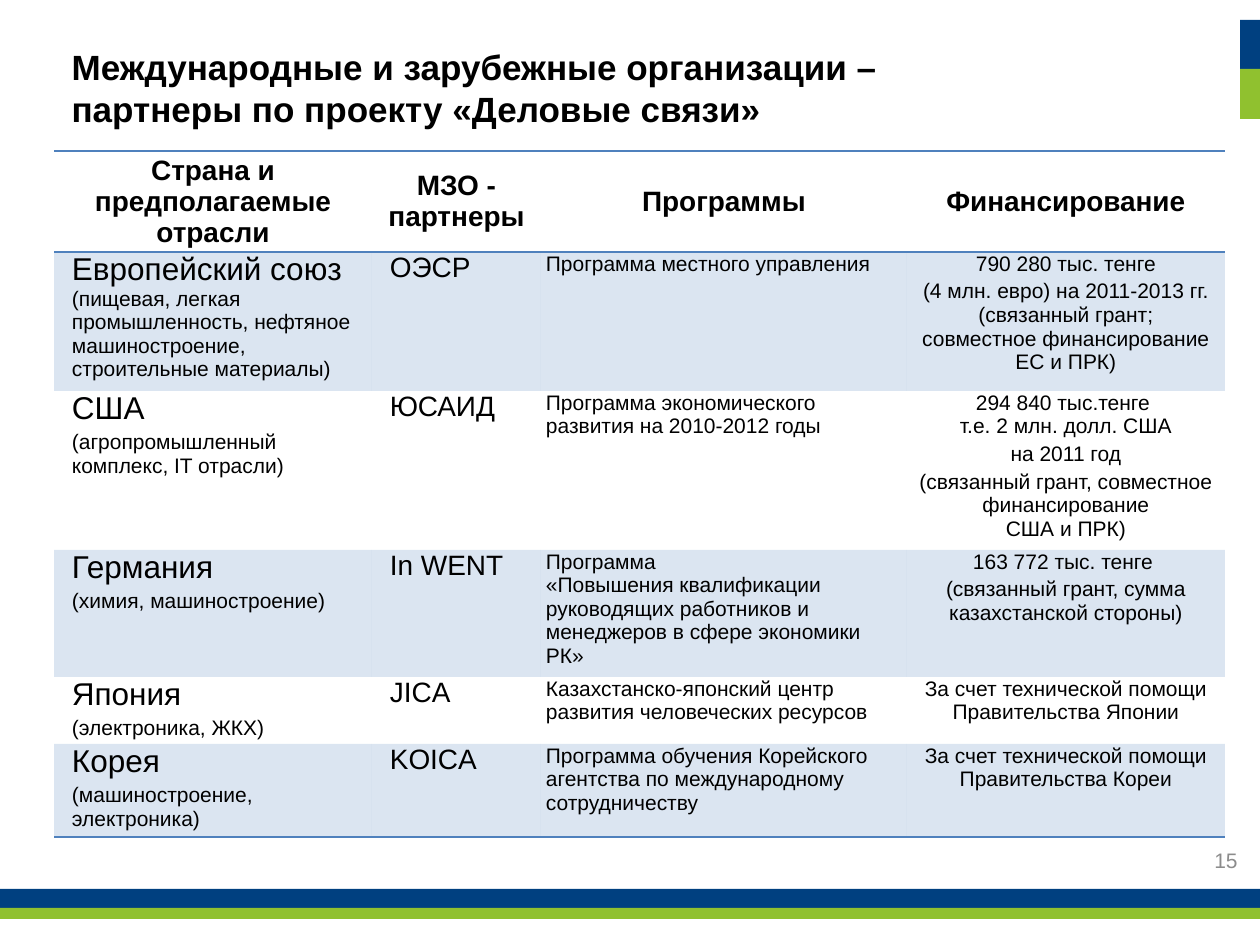
from dataclasses import dataclass

from lxml import etree
from pptx import Presentation
from pptx.dml.color import RGBColor
from pptx.enum.shapes import MSO_SHAPE
from pptx.enum.text import MSO_ANCHOR, PP_ALIGN
from pptx.oxml.ns import qn
from pptx.util import Emu, Pt

RECT = MSO_SHAPE.RECTANGLE
LEFT, CENTER, RIGHT = PP_ALIGN.LEFT, PP_ALIGN.CENTER, PP_ALIGN.RIGHT
TOP, MIDDLE = MSO_ANCHOR.TOP, MSO_ANCHOR.MIDDLE
NO_STYLE_NO_GRID = "{2D5ABB26-0587-4C30-8999-92F81FD0307C}"
TITLE_ONLY = 5


@dataclass(frozen=True)
class Theme:
    font: str = "Arial"
    text: str = "000000"
    muted: str = "8C8C8C"
    navy: str = "004080"
    green: str = "90C12F"
    table: str = "4F81BD"
    band_alpha: int = 20
    title: int = 20
    country: int = 18
    label: int = 16
    body: int = 12


THEME = Theme()

TITLE = "Международные и зарубежные организации – партнеры по проекту «Деловые связи»"
PAGE_NUMBER = "15"
HEADERS = ["Страна и предполагаемые отрасли", "МЗО - партнеры", "Программы", "Финансирование"]

# country, sectors, sectors on a new paragraph, partner, programme, funding paragraphs
ROWS = [
    ("Европейский союз ",
     "(пищевая, легкая промышленность, нефтяное машиностроение, строительные материалы)",
     False, "ОЭСР", "Программа местного управления",
     ["790 280 тыс. тенге",
      "(4 млн. евро) на 2011-2013 гг.\n(связанный грант;\nсовместное финансирование\nЕС и ПРК)"]),
    ("США", "(агропромышленный комплекс, IT отрасли)",
     True, "ЮСАИД", "Программа экономического развития на 2010-2012 годы",
     ["294 840 тыс.тенге \nт.е. 2 млн. долл. США", "на 2011 год",
      "(связанный грант, совместное финансирование\nСША и ПРК)"]),
    ("Германия", "(химия, машиностроение)",
     True, "In WENT",
     "Программа\n«Повышения квалификации руководящих работников и менеджеров в сфере экономики РК»",
     ["163 772 тыс. тенге ", "(связанный грант, сумма казахстанской стороны)"]),
    ("Япония", "(электроника, ЖКХ)",
     True, "JICA", "Казахстанско-японский центр развития человеческих ресурсов",
     ["За счет технической помощи Правительства Японии"]),
    ("Корея", "(машиностроение, электроника)",
     True, "KOICA", "Программа обучения Корейского агентства по международному сотрудничеству",
     ["За счет технической помощи Правительства Кореи"]),
]

# left, top, width, height in px
BARS = [
    (0, 889, 1260, 19, THEME.navy),
    (0, 908, 1260, 11, THEME.green),
    (1240, 20, 20, 49, THEME.navy),
    (1240, 69, 20, 50, THEME.green),
]
TITLE_BOX = (59, 39, 908, 97)
NUMBER_BOX = (956, 835, 294, 51)
TABLE_AT = (54, 151)
COLUMNS = [318, 169, 366, 318]
ROW_HEIGHTS = [101, 139, 159, 127, 67, 93]
CELL_INSET = 5
CELL_INDENT = 13


def px(n):
    return Emu(round(n * 914400 / 126))


def place(shape, box):
    shape.left, shape.top, shape.width, shape.height = map(px, box)


def write(tf, paragraphs, size=THEME.body, bold=False, color=THEME.text, align=LEFT, indent=0):
    """Fill tf; a paragraph is a string or a list of (text, size) runs."""
    tf.word_wrap = True
    for i, runs in enumerate(paragraphs):
        p = tf.add_paragraph() if i else tf.paragraphs[0]
        p.alignment = align
        p.space_before = Pt(2.5 if i else 0)
        if indent:
            p._p.get_or_add_pPr().set("marL", str(px(indent)))
        for text, run_size in [(runs, size)] if isinstance(runs, str) else runs:
            for j, line in enumerate(text.split("\n")):
                if j:
                    p.add_line_break()
                r = p.add_run()
                r.text = line
                r.font.name = THEME.font
                r.font.size = Pt(run_size)
                r.font.bold = bold
                r.font.color.rgb = RGBColor.from_string(color)


def add_border(cell, side):
    ln = etree.SubElement(cell._tc.get_or_add_tcPr(), qn(f"a:ln{side}"), w=str(Pt(1)))
    fill = etree.SubElement(ln, qn("a:solidFill"))
    etree.SubElement(fill, qn("a:srgbClr"), val=THEME.table)


def format_cell(cell, banded, borders, anchor):
    cell.margin_left = cell.margin_right = px(CELL_INSET)
    cell.margin_top = cell.margin_bottom = 0
    cell.vertical_anchor = anchor
    for side in borders:
        add_border(cell, side)
    if banded:
        cell.fill.solid()
        cell.fill.fore_color.rgb = RGBColor.from_string(THEME.table)
        color = cell._tc.tcPr.find(qn("a:solidFill")).find(qn("a:srgbClr"))
        etree.SubElement(color, qn("a:alpha"), val=str(THEME.band_alpha * 1000))
    else:
        cell.fill.background()


def add_partner_table(s):
    frame = s.shapes.add_table(len(ROW_HEIGHTS), len(COLUMNS), *map(
        px, (*TABLE_AT, sum(COLUMNS), sum(ROW_HEIGHTS))))
    frame.element.find(".//" + qn("a:tableStyleId")).text = NO_STYLE_NO_GRID
    table = frame.table
    for column, width in zip(table.columns, COLUMNS):
        column.width = px(width)
    for row, height in zip(table.rows, ROW_HEIGHTS):
        row.height = px(height)

    for c, header in enumerate(HEADERS):
        cell = table.cell(0, c)
        format_cell(cell, False, "TB", MIDDLE)
        write(cell.text_frame, [header], size=THEME.label, bold=True, align=CENTER)

    for i, (country, sectors, split, partner, programme, funding) in enumerate(ROWS, 1):
        name, detail = (country, THEME.country), (sectors, THEME.body)
        contents = [
            ([[name], [detail]] if split else [[name, detail]], {"indent": CELL_INDENT}),
            ([partner], {"size": THEME.label, "indent": CELL_INDENT}),
            ([programme], {}),
            (funding, {"align": CENTER}),
        ]
        for c, (paragraphs, style) in enumerate(contents):
            cell = table.cell(i, c)
            format_cell(cell, i % 2 == 1, "B" if i == len(ROWS) else "", TOP)
            write(cell.text_frame, paragraphs, **style)


def main():
    prs = Presentation()
    prs.slide_width, prs.slide_height = px(1260), px(945)
    s = prs.slides.add_slide(prs.slide_layouts[TITLE_ONLY])

    for *box, color in BARS:
        bar = s.shapes.add_shape(RECT, *map(px, box))
        bar.shadow.inherit = False
        bar.fill.solid()
        bar.fill.fore_color.rgb = RGBColor.from_string(color)
        bar.line.fill.background()

    title = s.shapes.title
    place(title, TITLE_BOX)
    title.text_frame.vertical_anchor = TOP
    write(title.text_frame, [TITLE], size=THEME.title, bold=True)

    add_partner_table(s)

    number = s.shapes.add_textbox(*map(px, NUMBER_BOX))
    number.text_frame.vertical_anchor = MIDDLE
    write(number.text_frame, [PAGE_NUMBER], color=THEME.muted, align=RIGHT)

    prs.save("out.pptx")


if __name__ == "__main__":
    main()
